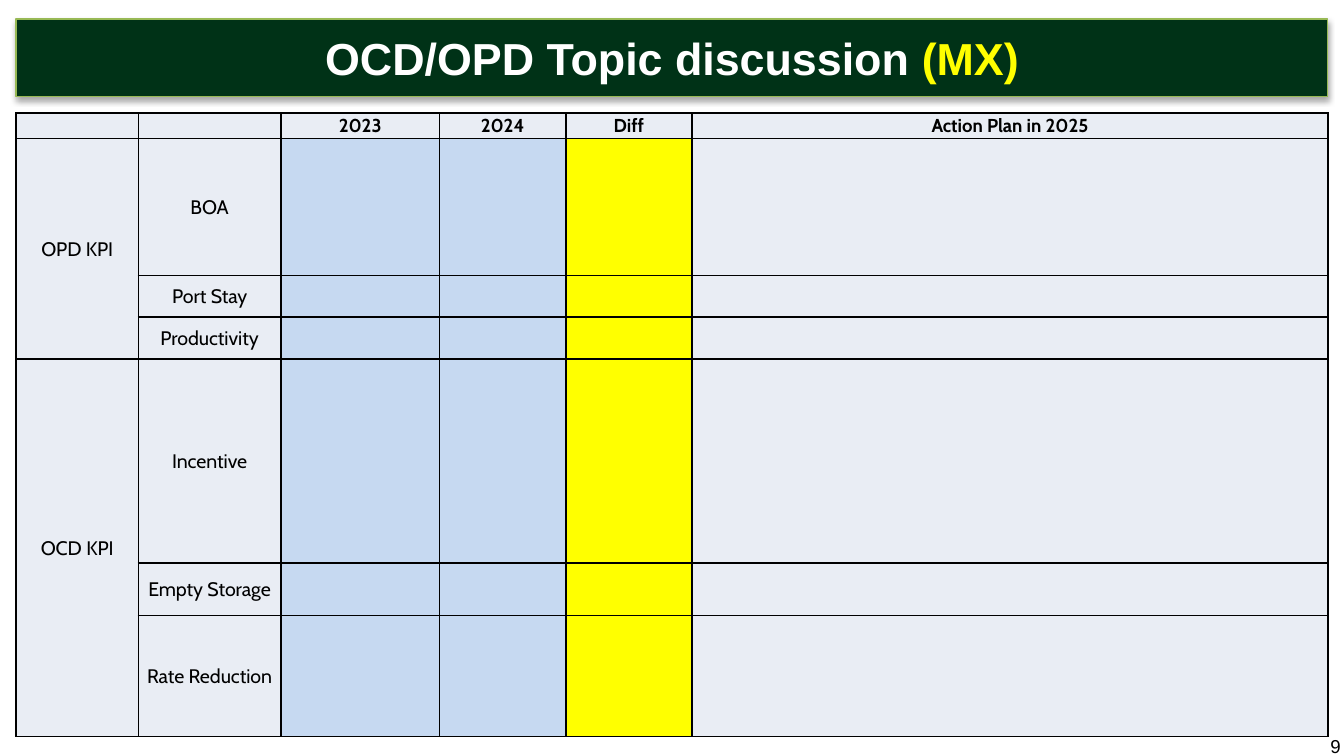
from dataclasses import dataclass

from lxml import etree
from pptx import Presentation
from pptx.dml.color import RGBColor
from pptx.enum.text import MSO_ANCHOR, MSO_AUTO_SIZE, PP_ALIGN
from pptx.oxml.ns import qn
from pptx.util import Inches, Pt

MIDDLE = MSO_ANCHOR.MIDDLE
CENTER = PP_ALIGN.CENTER
NO_AUTOFIT = MSO_AUTO_SIZE.NONE
TITLE_ONLY = 5
PAGE_WIDTH = 10
PAGE_HEIGHT = PAGE_WIDTH * 9 / 16


@dataclass(frozen=True)
class Theme:
    banner: str = "003217"
    banner_line: str = "98B955"
    white: str = "FFFFFF"
    black: str = "000000"
    yellow: str = "FFFF00"
    label_fill: str = "E9EDF4"
    value_fill: str = "C6D9F1"
    title_font: str = "Arial"
    table_font: str = "Cabin"
    title_size: float = 24
    header_size: float = 10
    label_size: float = 10.5
    number_size: float = 10


@dataclass(frozen=True)
class Measure:
    name: str
    height: float


@dataclass(frozen=True)
class Group:
    name: str
    measures: tuple[Measure, ...]


THEME = Theme()
HEADERS = ("", "", "2023", "2024", "Diff", "Action Plan in 2025")
COLUMN_WIDTHS = (0.91, 1.06, 1.18, 0.94, 0.94, 4.73)
COLUMN_FILLS = (THEME.label_fill, THEME.label_fill, THEME.value_fill,
                THEME.value_fill, THEME.yellow, THEME.label_fill)
HEADER_HEIGHT = 0.19
GROUPS = (
    Group("OPD KPI", (Measure("BOA", 1.02), Measure("Port Stay", 0.31),
                      Measure("Productivity", 0.31))),
    Group("OCD KPI", (Measure("Incentive", 1.52), Measure("Empty Storage", 0.39),
                      Measure("Rate Reduction", 0.9))),
)


def style_span(span, font: str, size: float, color: str, bold: bool = False) -> None:
    span.font.name = font
    span.font.size = Pt(size)
    span.font.bold = bold
    span.font.color.rgb = RGBColor.from_string(color)


def set_margins(target, left: float, top: float, right: float, bottom: float) -> None:
    target.margin_left, target.margin_top = Inches(left), Inches(top)
    target.margin_right, target.margin_bottom = Inches(right), Inches(bottom)


def add_color(parent, color: str):
    return etree.SubElement(parent, qn("a:srgbClr"), val=color)


def add_shadow(shape) -> None:
    effects = etree.SubElement(shape.element.spPr, qn("a:effectLst"))
    shadow = etree.SubElement(effects, qn("a:outerShdw"), blurRad=str(Pt(3.1)),
                              dist=str(Pt(1.8)), dir="5400000", rotWithShape="0")
    etree.SubElement(add_color(shadow, THEME.black), qn("a:alpha"), val="35000")


def add_borders(cell) -> None:
    properties = cell._tc.get_or_add_tcPr()
    for index, side in enumerate(("a:lnL", "a:lnR", "a:lnT", "a:lnB")):
        line = etree.Element(qn(side), w=str(Pt(1)))
        add_color(etree.SubElement(line, qn("a:solidFill")), THEME.black)
        properties.insert(index, line)


def fill_cell(cell, text: str, fill: str, size: float, bold: bool) -> None:
    cell.fill.solid()
    cell.fill.fore_color.rgb = RGBColor.from_string(fill)
    add_borders(cell)
    cell.vertical_anchor = MIDDLE
    set_margins(cell, 0.01, 0.01, 0.01, 0)
    para = cell.text_frame.paragraphs[0]
    para.alignment = CENTER
    if text:
        para.text = text
        style_span(para.runs[0], THEME.table_font, size, THEME.black, bold)
    else:  # keeps empty cells from stretching their row
        etree.SubElement(para._p, qn("a:endParaRPr"), sz=str(int(size * 100)))


def add_title(page) -> None:
    banner = page.shapes.title
    banner.left, banner.top = Inches(0.12), Inches(0.14)
    banner.width, banner.height = Inches(9.76), Inches(0.58)
    banner.fill.solid()
    banner.fill.fore_color.rgb = RGBColor.from_string(THEME.banner)
    banner.line.color.rgb = RGBColor.from_string(THEME.banner_line)
    banner.line.width = Pt(0.75)
    add_shadow(banner)
    frame = banner.text_frame
    frame.auto_size = NO_AUTOFIT
    frame.vertical_anchor = MIDDLE
    set_margins(frame, 0, 0, 0, 0)
    para = frame.paragraphs[0]
    para.alignment = CENTER
    for text, color in (("OCD/OPD Topic discussion ", THEME.white), ("(MX)", THEME.yellow)):
        span = para.add_run()
        span.text = text
        style_span(span, THEME.title_font, THEME.title_size, color, True)


def add_kpi_table(page) -> None:
    heights = [HEADER_HEIGHT] + [m.height for group in GROUPS for m in group.measures]
    table = page.shapes.add_table(
        len(heights), len(HEADERS), Inches(0.12), Inches(0.84),
        Inches(sum(COLUMN_WIDTHS)), Inches(sum(heights))).table
    table.first_row = table.horz_banding = False
    for column, width in zip(table.columns, COLUMN_WIDTHS):
        column.width = Inches(width)
    for row, height in zip(table.rows, heights):
        row.height = Inches(height)

    # Header row
    for cell, text in zip(table.rows[0].cells, HEADERS):
        fill_cell(cell, text, THEME.label_fill, THEME.header_size, True)

    # Measures, with one merged label for each group
    row_index = 1
    for group in GROUPS:
        first = row_index
        for measure in group.measures:
            texts = (group.name if row_index == first else "", measure.name, "", "", "", "")
            for cell, text, fill in zip(table.rows[row_index].cells, texts, COLUMN_FILLS):
                fill_cell(cell, text, fill, THEME.label_size, False)
            row_index += 1
        table.cell(first, 0).merge(table.cell(row_index - 1, 0))


def add_page_number(page) -> None:
    box = page.shapes.add_textbox(Inches(9.8), Inches(5.44), Inches(0.64), Inches(0.23))
    frame = box.text_frame
    frame.word_wrap = True
    frame.vertical_anchor = MIDDLE
    frame.text = "9"
    style_span(frame.paragraphs[0].runs[0], THEME.title_font, THEME.number_size, THEME.black)


def main() -> None:
    deck = Presentation()
    deck.slide_width, deck.slide_height = Inches(PAGE_WIDTH), Inches(PAGE_HEIGHT)
    page = deck.slides.add_slide(deck.slide_layouts[TITLE_ONLY])
    add_title(page)
    add_kpi_table(page)
    add_page_number(page)
    deck.save("out.pptx")


if __name__ == "__main__":
    main()
